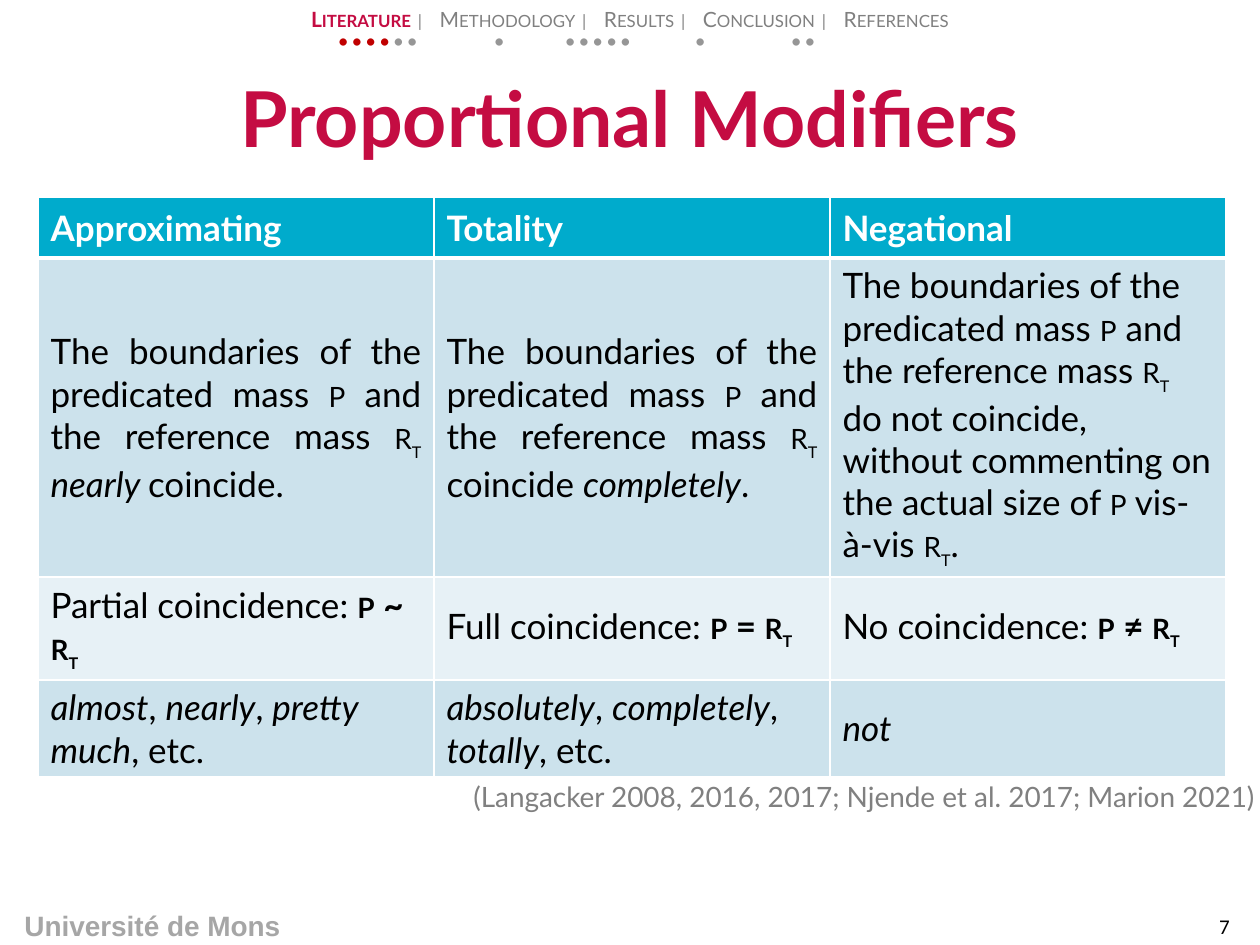
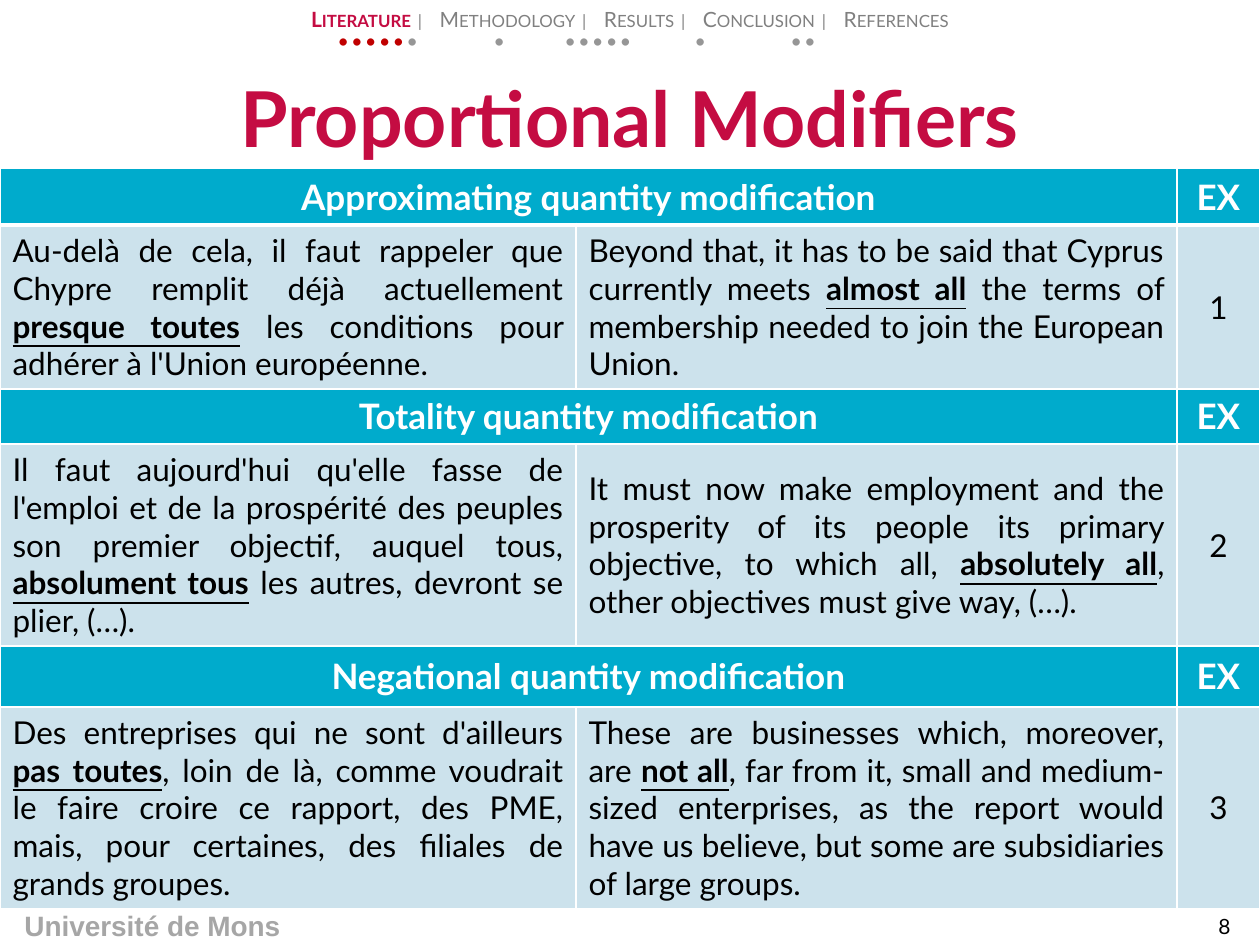
from lxml import etree
from pptx import Presentation
from pptx.dml.color import RGBColor
from pptx.enum.text import MSO_ANCHOR, PP_ALIGN
from pptx.oxml.ns import qn
from pptx.util import Emu, Pt

SLIDE_W, SLIDE_H = 1260, 945
EMU_PER_PX = 914400 / 126

CRIMSON = RGBColor(0xC4, 0x0C, 0x42)
DOT_RED = RGBColor(0xC0, 0x00, 0x00)
DOT_GREY = RGBColor(0x96, 0x96, 0x96)
GREY = RGBColor(0x80, 0x80, 0x80)
FOOTER_GREY = RGBColor(0xA6, 0xA6, 0xA6)
BLACK = RGBColor(0x00, 0x00, 0x00)
WHITE = RGBColor(0xFF, 0xFF, 0xFF)
TEAL = RGBColor(0x00, 0xAB, 0xCC)
PALE_BLUE = RGBColor(0xCC, 0xE2, 0xEC)
PALER_BLUE = RGBColor(0xE7, 0xF1, 0xF6)

LEFT, CENTER, JUSTIFY = PP_ALIGN.LEFT, PP_ALIGN.CENTER, PP_ALIGN.JUSTIFY
TOP, MIDDLE = MSO_ANCHOR.TOP, MSO_ANCHOR.MIDDLE

SECTIONS = ["Literature", "Methodology", "Results", "Conclusion", "References"]
DOTS_PER_SECTION = [6, 1, 5, 1, 2]
DOT_TABS = [156, 227, 357, 453]

# Run styles: b bold, i italic, u underlined, c small caps, s subscript
P = ("p", "c")
RT = [("r", "c"), ("t", "cs")]
BOLD_P = ("p", "bc")
BOLD_RT = [("r", "bc"), ("t", "bcs")]
MASS = "The boundaries of the predicated mass "
REFERENCE = " and the reference mass "

MODIFIER_KINDS = ["Approximating", "Totality", "Negational"]
DEFINITIONS = [
    [MASS, P, REFERENCE, *RT, " ", ("nearly ", "i"), "coincide."],
    [MASS, P, REFERENCE, *RT, " coincide ", ("completely", "i"), "."],
    [MASS, P, REFERENCE, *RT,
     " do not coincide, without commenting on the actual size of ",
     P, " vis-à-vis ", *RT, "."],
]
COINCIDENCES = [
    [f"{degree} coincidence: ", BOLD_P, (f" {sign} ", "b"), *BOLD_RT]
    for degree, sign in [("Partial", "~"), ("Full", "="), ("No", "≠")]
]
MODIFIERS = [
    [("almost", "i"), ", ", ("nearly", "i"), ", ", ("pretty much", "i"), ", etc."],
    [("absolutely", "i"), ", ", ("completely", "i"), ", ", ("totally", "i"), ", etc."],
    [("not", "i")],
]

EXAMPLES = [
    ("Approximating",
     ["Au-delà de cela, il faut rappeler que Chypre remplit déjà actuellement ",
      ("presque toutes", "bu"),
      " les conditions pour adhérer à l'Union européenne."],
     ["Beyond that, it has to be said that Cyprus currently meets ",
      ("almost all", "bu"),
      " the terms of membership needed to join the European Union."]),
    ("Totality",
     ["Il faut aujourd'hui qu'elle fasse de l'emploi et de la prospérité des "
      "peuples son premier objectif, auquel tous, ",
      ("absolument tous", "bu"),
      " les autres, devront se plier, (…)."],
     ["It must now make employment and the prosperity of its people its "
      "primary objective, to which all, ",
      ("absolutely all", "bu"),
      ", other objectives must give way, (…)."]),
    ("Negational",
     ["Des entreprises qui ne sont d'ailleurs ",
      ("pas toutes", "bu"),
      ", loin de là, comme voudrait le faire croire ce rapport, des PME, mais, "
      "pour certaines, des filiales de grands groupes."],
     ["These are businesses which, moreover, are ",
      ("not all", "bu"),
      ", far from it, small and medium-sized enterprises, as the report would "
      "have us believe, but some are subsidiaries of large groups."]),
]


def px(length):
    return Emu(round(length * EMU_PER_PX))


def style_paragraph(paragraph, size, color, bold=False, font="Lato", align=LEFT):
    paragraph.alignment = align
    paragraph.font.name = font
    paragraph.font.size = Pt(size)
    paragraph.font.color.rgb = color
    paragraph.font.bold = bold


def add_runs(paragraph, parts):
    """Add plain strings and (text, style letters) pairs as runs."""
    for part in parts:
        text, style = (part, "") if isinstance(part, str) else part
        run = paragraph.add_run()
        run.text = text
        if "b" in style:
            run.font.bold = True
        if "i" in style:
            run.font.italic = True
        if "u" in style:
            run.font.underline = True
        properties = run.font._element
        if "c" in style:
            properties.set("cap", "small")
        if "s" in style:
            properties.set("baseline", "-25000")


def add_text(slide, box, text="", size=12, color=BLACK, anchor=TOP, wrap=True, **style):
    """Add a one-paragraph text box and return its frame."""
    frame = slide.shapes.add_textbox(*map(px, box)).text_frame
    frame.word_wrap = wrap
    frame.vertical_anchor = anchor
    paragraph = frame.paragraphs[0]
    if text:
        add_runs(paragraph, [text])
    style_paragraph(paragraph, size, color, **style)
    return frame


def add_small_caps(paragraph, text, color, bold=False, spacing=0):
    run = paragraph.add_run()
    run.text = text
    run.font.color.rgb = color
    run.font.bold = bold
    run.font._element.set("cap", "small")
    if spacing:
        run.font._element.set("spc", str(spacing))


def add_section_names(slide):
    names = add_text(slide, (0, 0, SLIDE_W, 32), align=CENTER).paragraphs[0]
    for index, section in enumerate(SECTIONS):
        if index:
            add_small_caps(names, " | ", GREY, spacing=150)
        add_small_caps(names, section, GREY if index else CRIMSON, bold=not index)


def add_progress_dots(slide, slides_seen):
    frame = slide.shapes.add_textbox(px(326), px(20), px(732), px(54)).text_frame
    frame.word_wrap = True
    dots = frame.paragraphs[0]
    tabs = etree.SubElement(dots._p.get_or_add_pPr(), qn("a:tabLst"))
    for position in DOT_TABS:
        etree.SubElement(tabs, qn("a:tab"), pos=str(px(position)), algn="l")
    style_paragraph(dots, 12, DOT_GREY, bold=True)
    groups = [" ".join("•" * count) for count in DOTS_PER_SECTION]
    row = "\t".join(groups)
    seen_length = 2 * slides_seen
    add_small_caps(dots, row[:seen_length], DOT_RED, bold=True)
    add_small_caps(dots, row[seen_length:], DOT_GREY, bold=True)


def add_base_slide(deck, number, slides_seen, number_font):
    """Add a slide with its title, navigation and footer."""
    slide = deck.slides.add_slide(deck.slide_layouts[6])
    add_text(slide, (0, 902, 305, 47 - 4), "Université de Mons", 16, FOOTER_GREY,
             bold=True, font="Arial", align=CENTER)
    add_text(slide, (63, 38, 1134, 157), "Proportional Modifiers", 44, CRIMSON,
             anchor=MIDDLE, bold=True, align=CENTER)
    add_text(slide, (1189, 907, 71, 38), str(number), 12, BLACK,
             anchor=MIDDLE, font=number_font, align=CENTER)
    add_section_names(slide)
    add_progress_dots(slide, slides_seen)
    return slide


def add_borders(cell, row):
    """Draw white cell borders, thicker below the first row."""
    properties = cell._tc.get_or_add_tcPr()
    thick_side = {0: "lnB", 1: "lnT"}.get(row)
    for side in ("lnL", "lnR", "lnT", "lnB"):
        width = Pt(3 if side == thick_side else 1)
        line = etree.SubElement(properties, qn(f"a:{side}"), w=str(width))
        fill = etree.SubElement(line, qn("a:solidFill"))
        etree.SubElement(fill, qn("a:srgbClr"), val=str(WHITE))


def add_grid(slide, left, top, widths, heights):
    box = (left, top, sum(widths), sum(heights))
    table = slide.shapes.add_table(len(heights), len(widths), *map(px, box)).table
    table.first_row = table.horz_banding = False
    for column, width in zip(table.columns, widths):
        column.width = px(width)
    for row, (table_row, height) in enumerate(zip(table.rows, heights)):
        table_row.height = px(height)
        for cell in table_row.cells:
            add_borders(cell, row)
    return table


def fill_cell(cell, parts, fill, size, color=BLACK, **style):
    cell.fill.solid()
    cell.fill.fore_color.rgb = fill
    cell.vertical_anchor = MIDDLE
    paragraph = cell.text_frame.paragraphs[0]
    add_runs(paragraph, parts)
    style_paragraph(paragraph, size, color, **style)


def fill_header(cell, text, align=LEFT):
    fill_cell(cell, [text], TEAL, 20, WHITE, bold=True, align=align)


def add_definition_table(slide):
    table = add_grid(slide, 38, 197, [396] * 3, [61, 319, 103, 96])
    for column, kind in enumerate(MODIFIER_KINDS):
        fill_header(table.cell(0, column), kind)
        definition_align = LEFT if kind == "Negational" else JUSTIFY
        fill_cell(table.cell(1, column), DEFINITIONS[column], PALE_BLUE, 20,
                  align=definition_align)
        fill_cell(table.cell(2, column), COINCIDENCES[column], PALER_BLUE, 20)
        fill_cell(table.cell(3, column), MODIFIERS[column], PALE_BLUE, 20)


def add_example_table(slide):
    table = add_grid(slide, 0, 168, [576, 601, 83], [57, 163, 55, 202, 61, 201])
    for index, (kind, french, english) in enumerate(EXAMPLES):
        header, body = 2 * index, 2 * index + 1
        table.cell(header, 0).merge(table.cell(header, 1))
        fill_header(table.cell(header, 0), f"{kind} quantity modification", CENTER)
        fill_header(table.cell(header, 2), "EX", CENTER)
        fill_cell(table.cell(body, 0), french, PALE_BLUE, 18, align=JUSTIFY)
        fill_cell(table.cell(body, 1), english, PALE_BLUE, 18, align=JUSTIFY)
        fill_cell(table.cell(body, 2), [str(index + 1)], PALE_BLUE, 18, align=CENTER)


def add_citation(slide):
    frame = add_text(slide, (461, 757, 799, 57),
                     "(Langacker 2008, 2016, 2017; Njende et al. 2017; Marion 2021)",
                     16, GREY, wrap=False)
    frame.margin_right = 0
    frame.paragraphs[0].line_spacing = 1.5


def main():
    deck = Presentation()
    deck.slide_width, deck.slide_height = px(SLIDE_W), px(SLIDE_H)
    definitions = add_base_slide(deck, 7, 4, "Calibri")
    add_definition_table(definitions)
    add_citation(definitions)
    examples = add_base_slide(deck, 8, 5, "Lato")
    add_example_table(examples)
    deck.save("out.pptx")


if __name__ == "__main__":
    main()
